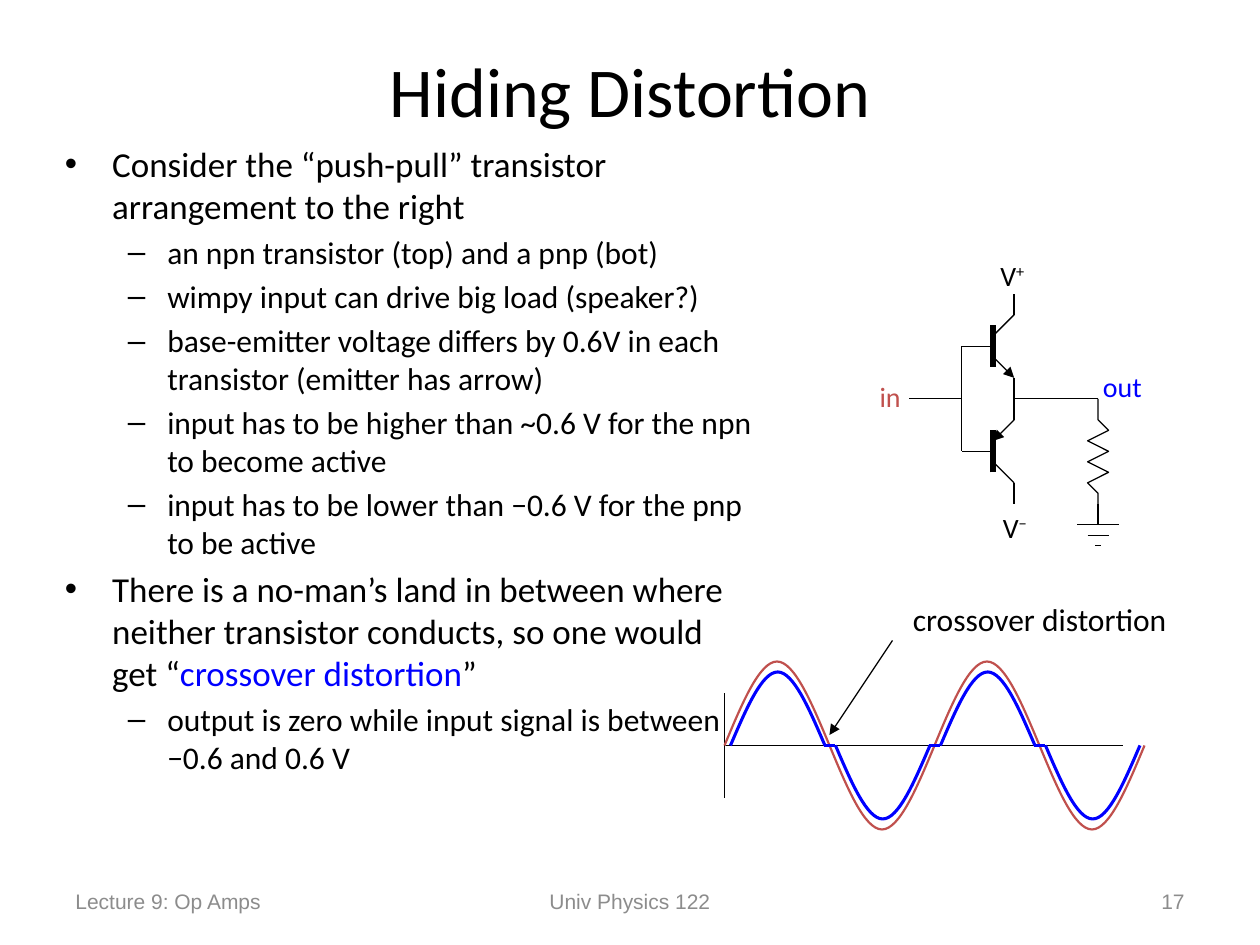
from lxml.etree import SubElement
from pptx import Presentation
from pptx.dml.color import RGBColor
from pptx.enum.shapes import MSO_CONNECTOR as Connector
from pptx.enum.text import MSO_ANCHOR as Anchor, PP_ALIGN as Align
from pptx.oxml.ns import qn
from pptx.util import Pt

COLORS = {"black": "000000", "blue": "0000FF", "red": "C0504D", "gray": "8C8C8C"}

TITLE = "Hiding Distortion"
BODY = [
    (0, [("Consider the “push-pull” transistor arrangement to the right", "black")]),
    (1, [("an npn transistor (top) and a pnp (bot)", "black")]),
    (1, [("wimpy input can drive big load (speaker?)", "black")]),
    (1, [("base-emitter voltage differs by 0.6V in each transistor (emitter has arrow)", "black")]),
    (1, [("input has to be higher than ~0.6 V for the npn to become active", "black")]),
    (1, [("input has to be lower than −0.6 V for the pnp to be active", "black")]),
    (0, [("There is a no-man’s land in between where neither transistor conducts, "
          "so one would get “", "black"), ("crossover distortion", "blue"), ("”", "black")]),
    (1, [("output is zero while input signal is between −0.6 and 0.6 V", "black")]),
]
LEVELS = [
    {"size": 20, "left": 27, "hang": 27, "bullet": "•"},
    {"size": 18, "left": 58.5, "hang": 22.5, "bullet": "–"},
]
FOOTERS = [
    ("Lecture 9: Op Amps", 36, 168, Align.LEFT),
    ("Univ Physics 122", 246, 228, Align.CENTER),
    ("17", 516, 168, Align.RIGHT),
]
LABELS = [
    ("out", "", 623.2, 207.5, 37, 16, "blue"),
    ("in", "", 495.5, 213.6, 27, 16, "red"),
    ("V", "+", 564.5, 144, 32, 16, "black"),
    ("V", "−", 566, 288, 31, 16, "black"),
    ("crossover distortion", "", 514.6, 339.4, 171, 18, "black"),
]

INPUT_X, JOIN_X, BASE_X, EMITTER_X, LOAD_X = 519.5, 549.5, 567.5, 579.5, 627.5
MID_Y = 227.9
GROUND_Y = MID_Y + 72
GROUND_BARS = [(0, 12), (6, 6), (12, 1.5)]
RESISTOR_STEP = 6

WAVE_X, WAVE_Y, HALF_PERIOD = 414, 426, 60
HALF_CYCLES = 4
WAVES = [("red", 1.25, 48, 0, 0), ("blue", 1.75, 42, 3, 0.4)]
ARCH_HEIGHTS = [0, 0.5, 1, 1, 1, 0.5, 0]

deck = Presentation()
deck.slide_width, deck.slide_height = Pt(720), Pt(540)
page = deck.slides.add_slide(deck.slide_layouts[6])


def rgb(color):
    return RGBColor.from_string(COLORS[color])


def add_box(left, top, width, height, anchor=Anchor.TOP, wrap=True):
    frame = page.shapes.add_textbox(Pt(left), Pt(top), Pt(width), Pt(height)).text_frame
    frame.word_wrap = wrap
    frame.vertical_anchor = anchor
    return frame


def add_span(para, text, size, color="black", font="Calibri"):
    span = para.add_run()
    span.text = text
    span.font.name, span.font.size = font, Pt(size)
    span.font.color.rgb = rgb(color)
    return span


def add_line(start, end, color="black", width=0.75, arrow=False):
    line = page.shapes.add_connector(Connector.STRAIGHT, *map(Pt, start + end))
    line.line.color.rgb = rgb(color)
    line.line.width = Pt(width)
    if arrow:
        SubElement(line.line._get_or_add_ln(), qn("a:tailEnd"), type="triangle")
    SubElement(line._element.spPr, qn("a:effectLst"))


def add_outline(points, color, width):
    points = [(Pt(x), Pt(y)) for x, y in points]
    builder = page.shapes.build_freeform(*points[0])
    builder.add_line_segments(points[1:], close=False)
    outline = builder.convert_to_shape()
    outline.shadow.inherit = False
    outline.fill.background()
    outline.line.color.rgb = rgb(color)
    outline.line.width = Pt(width)
    return outline


def add_curve(points, color, width):
    outline = add_outline(points, color, width)
    segments = list(outline._element.iter(qn("a:lnTo")))
    parent = segments[0].getparent()
    for first in range(0, len(segments), 3):
        bend = SubElement(parent, qn("a:cubicBezTo"))
        for segment in segments[first:first + 3]:
            bend.append(segment[0])
            parent.remove(segment)


def add_bullets():
    frame = add_box(30, 78, 408, 396)
    for index, (level, spans) in enumerate(BODY):
        style = LEVELS[level]
        para = frame.add_paragraph() if index else frame.paragraphs[0]
        para.level = level
        para.space_before = Pt(style["size"] * 0.2)
        props = para._p.get_or_add_pPr()
        props.set("marL", str(Pt(style["left"])))
        props.set("indent", str(-Pt(style["hang"])))
        SubElement(props, qn("a:buFont"), typeface="Arial")
        SubElement(props, qn("a:buChar"), char=style["bullet"])
        for text, color in spans:
            add_span(para, text, style["size"], color)


def add_transistor(side, emitter_out):
    def at(x, offset):
        return x, MID_Y + side * offset

    emitter = [at(BASE_X, 24), at(EMITTER_X, 12)]
    if not emitter_out:
        emitter.reverse()
    add_line(at(BASE_X, 42), at(BASE_X, 18), width=3)
    add_line(at(BASE_X, 36), at(EMITTER_X, 48))
    add_line(*emitter, arrow=True)
    add_line(at(EMITTER_X, 48), at(EMITTER_X, 60))
    add_line(at(EMITTER_X, 12), at(EMITTER_X, 0))
    add_line(at(BASE_X, 30), at(JOIN_X, 30))


def add_circuit():
    add_transistor(-1, emitter_out=True)
    add_transistor(1, emitter_out=False)
    add_line((JOIN_X, MID_Y - 30), (JOIN_X, MID_Y + 30))
    add_line((JOIN_X, MID_Y), (INPUT_X, MID_Y))
    add_line((EMITTER_X, MID_Y), (LOAD_X, MID_Y))
    zigzag = [(LOAD_X + RESISTOR_STEP * (-1) ** turn, MID_Y + RESISTOR_STEP * (turn + 3))
              for turn in range(6)]
    add_outline([(LOAD_X, MID_Y), (LOAD_X, MID_Y + 12), *zigzag,
                 (LOAD_X, MID_Y + 54), (LOAD_X, MID_Y + 60)], "black", 0.75)
    add_line((LOAD_X, MID_Y + 60), (LOAD_X, GROUND_Y))
    for drop, half in GROUND_BARS:
        add_line((LOAD_X - half, GROUND_Y + drop), (LOAD_X + half, GROUND_Y + drop))


def add_waves():
    add_line((WAVE_X, WAVE_Y - 30), (WAVE_X, WAVE_Y + 30))
    add_line((WAVE_X, WAVE_Y), (WAVE_X + 228, WAVE_Y))
    for color, width, height, inset, shift in WAVES:
        step = (HALF_PERIOD - 2 * inset) / (len(ARCH_HEIGHTS) - 1)
        for cycle in range(HALF_CYCLES):
            crossing = WAVE_X + cycle * HALF_PERIOD
            side = 1 if cycle % 2 else -1
            add_curve([(crossing + inset + shift + step * index, WAVE_Y + side * height * rise)
                       for index, rise in enumerate(ARCH_HEIGHTS)], color, width)
            if inset and cycle:
                add_line((crossing - inset, WAVE_Y), (crossing + inset, WAVE_Y), color, width)
    add_line((510, 366), (474, 420), arrow=True)


for text, left, width, align in FOOTERS:
    para = add_box(left, 500.5, width, 28.5, Anchor.MIDDLE).paragraphs[0]
    para.alignment = align
    add_span(para, text, 12, "gray", "Arial")

heading = add_box(54, 6, 612, 90, Anchor.MIDDLE).paragraphs[0]
heading.alignment = Align.CENTER
add_span(heading, TITLE, 40)

add_bullets()
add_circuit()
add_waves()

for text, raised, left, top, width, size, color in LABELS:
    para = add_box(left, top, width, size * 1.2 + 7.2, wrap=False).paragraphs[0]
    add_span(para, text, size, color)
    if raised:
        add_span(para, raised, size, color).font._element.set("baseline", "30000")

deck.save("out.pptx")
